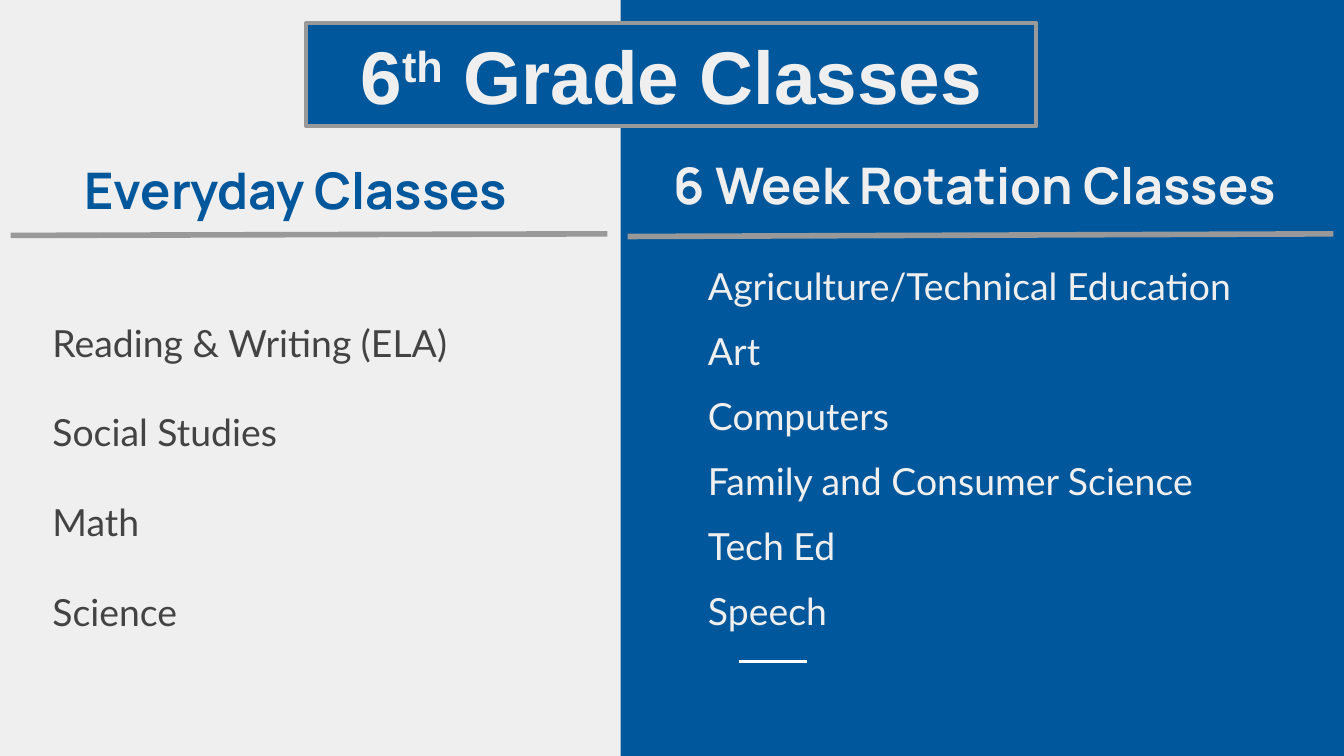
from lxml.etree import SubElement
from pptx import Presentation
from pptx.dml.color import RGBColor
from pptx.enum.shapes import MSO_CONNECTOR, MSO_SHAPE
from pptx.enum.text import MSO_ANCHOR as Anchor, MSO_AUTO_SIZE as AutoSize, PP_ALIGN as Align
from pptx.oxml.ns import qn
from pptx.util import Cm, Pt

BLUE = RGBColor(0x01, 0x57, 0x9B)
PALE = RGBColor(0xEF, 0xEF, 0xEF)
GRAY = RGBColor(0x99, 0x99, 0x99)
DARK = RGBColor(0x43, 0x43, 0x43)
WHITE = RGBColor(0xFF, 0xFF, 0xFF)

WIDTH, HEIGHT = 25.4, 14.29
SPLIT = 11.73  # where the blue half begins
COMPARISON_LAYOUT = 4


def place(shape, left, top, width, height):
    shape.left, shape.top = Cm(left), Cm(top)
    shape.width, shape.height = Cm(width), Cm(height)


def set_frame(frame, anchor, inset_x=0.25, inset_y=0.25):
    frame.word_wrap = True
    frame.auto_size = AutoSize.NONE
    frame.vertical_anchor = anchor
    frame.margin_left = frame.margin_right = Cm(inset_x)
    frame.margin_top = frame.margin_bottom = Cm(inset_y)


def style_runs(paragraph, font_name, size, color, bold=False):
    for run in paragraph.runs:
        run.font.name, run.font.size, run.font.bold = font_name, Pt(size), bold
        run.font.color.rgb = color


def remove_bullet(paragraph):
    properties = paragraph._p.get_or_add_pPr()
    properties.set("marL", "0")
    properties.set("indent", "0")
    SubElement(properties, qn("a:buNone"))


def add_rule(slide, start, end, color, weight):
    rule = slide.shapes.add_connector(
        MSO_CONNECTOR.STRAIGHT, *(Cm(value) for value in (*start, *end)))
    rule.line.color.rgb = color
    rule.line.width = Pt(weight)
    SubElement(rule.element.spPr, qn("a:effectLst"))


def add_backdrop(slide, left, top, width, height):
    """Pale page with a blue half and a short white accent."""
    slide.background.fill.solid()
    slide.background.fill.fore_color.rgb = PALE
    panel = slide.shapes.add_shape(
        MSO_SHAPE.RECTANGLE, Cm(left), Cm(top), Cm(width), Cm(height))
    panel.shadow.inherit = False
    panel.fill.solid()
    panel.fill.fore_color.rgb = BLUE
    panel.line.fill.background()
    # Send the panel behind the placeholders
    panel.element.getparent().insert(2, panel.element)
    add_rule(slide, (left + 2.24, 12.5), (left + 3.53, 12.5), WHITE, 1.5)


def fill_banner(banner, box):
    """Slide title in a framed blue box."""
    place(banner, *box)
    banner.fill.solid()
    banner.fill.fore_color.rgb = BLUE
    banner.line.color.rgb = GRAY
    banner.line.width = Pt(2.25)
    set_frame(banner.text_frame, Anchor.MIDDLE, inset_y=0.13)
    paragraph = banner.text_frame.paragraphs[0]
    paragraph.alignment = Align.CENTER
    for part in ("6", "th", " Grade Classes"):
        paragraph.add_run().text = part
    style_runs(paragraph, "Arial", 40, PALE, bold=True)
    paragraph.runs[1].font._element.set("baseline", "30000")


def fill_heading(heading, box, text, color):
    place(heading, *box)
    set_frame(heading.text_frame, Anchor.BOTTOM)
    heading.text_frame.text = text
    paragraph = heading.text_frame.paragraphs[0]
    paragraph.alignment = Align.CENTER
    paragraph.space_before = Pt(0)
    style_runs(paragraph, "Manrope", 27, color, bold=True)


def fill_class_list(class_list, box, classes, color, anchor, line_spacing, gap):
    place(class_list, *box)
    set_frame(class_list.text_frame, anchor)
    class_list.text_frame.text = "\n".join(classes)
    paragraphs = class_list.text_frame.paragraphs
    for index, paragraph in enumerate(paragraphs):
        paragraph.alignment = Align.LEFT
        paragraph.line_spacing = line_spacing
        paragraph.space_before = Pt(gap if index else 0)
        style_runs(paragraph, "Lato", 20, color)
    paragraphs[-1].space_after = Pt(gap)
    for paragraph in paragraphs:
        remove_bullet(paragraph)


def fill_everyday(slide, heading, class_list, left, top):
    """Left half: the classes taken every day."""
    fill_heading(heading, (left + 0.33, top, 10.52, 1.73), "Everyday Classes", BLUE)
    add_rule(slide, (left + 0.2, top + 1.78), (left + 11.48, top + 1.75), GRAY, 3)
    fill_class_list(
        class_list, (left + 0.74, top + 2.28, 9.7, 7.82),
        ["Reading & Writing (ELA)", "Social Studies", "Math", "Science"],
        DARK, Anchor.TOP, line_spacing=2.0, gap=0)


def fill_rotation(slide, heading, class_list, left, top):
    """Right half: the classes that rotate."""
    fill_heading(heading, (left + 0.46, top - 0.1, 12.47, 1.73),
                 "6 Week Rotation Classes", PALE)
    add_rule(slide, (left + 0.13, top + 1.8), (left + 13.47, top + 1.75), GRAY, 3)
    fill_class_list(
        class_list, (left + 1.4, top + 1.93, 10.67, 7.82),
        ["Agriculture/Technical Education", "Art", "Computers",
         "Family and Consumer Science", "Tech Ed", "Speech"],
        PALE, Anchor.MIDDLE, line_spacing=0.95, gap=12)


def main():
    presentation = Presentation()
    presentation.slide_width, presentation.slide_height = Cm(WIDTH), Cm(HEIGHT)
    slide = presentation.slides.add_slide(
        presentation.slide_layouts[COMPARISON_LAYOUT])
    banner, left_heading, left_list, right_heading, right_list = slide.placeholders

    add_backdrop(slide, SPLIT, 0, WIDTH - SPLIT, HEIGHT)
    fill_banner(banner, (5.79, 0.43, 13.79, 1.96))
    fill_everyday(slide, left_heading, left_list, left=0, top=2.67)
    fill_rotation(slide, right_heading, right_list, left=SPLIT, top=2.67)
    presentation.save("out.pptx")


if __name__ == "__main__":
    main()
